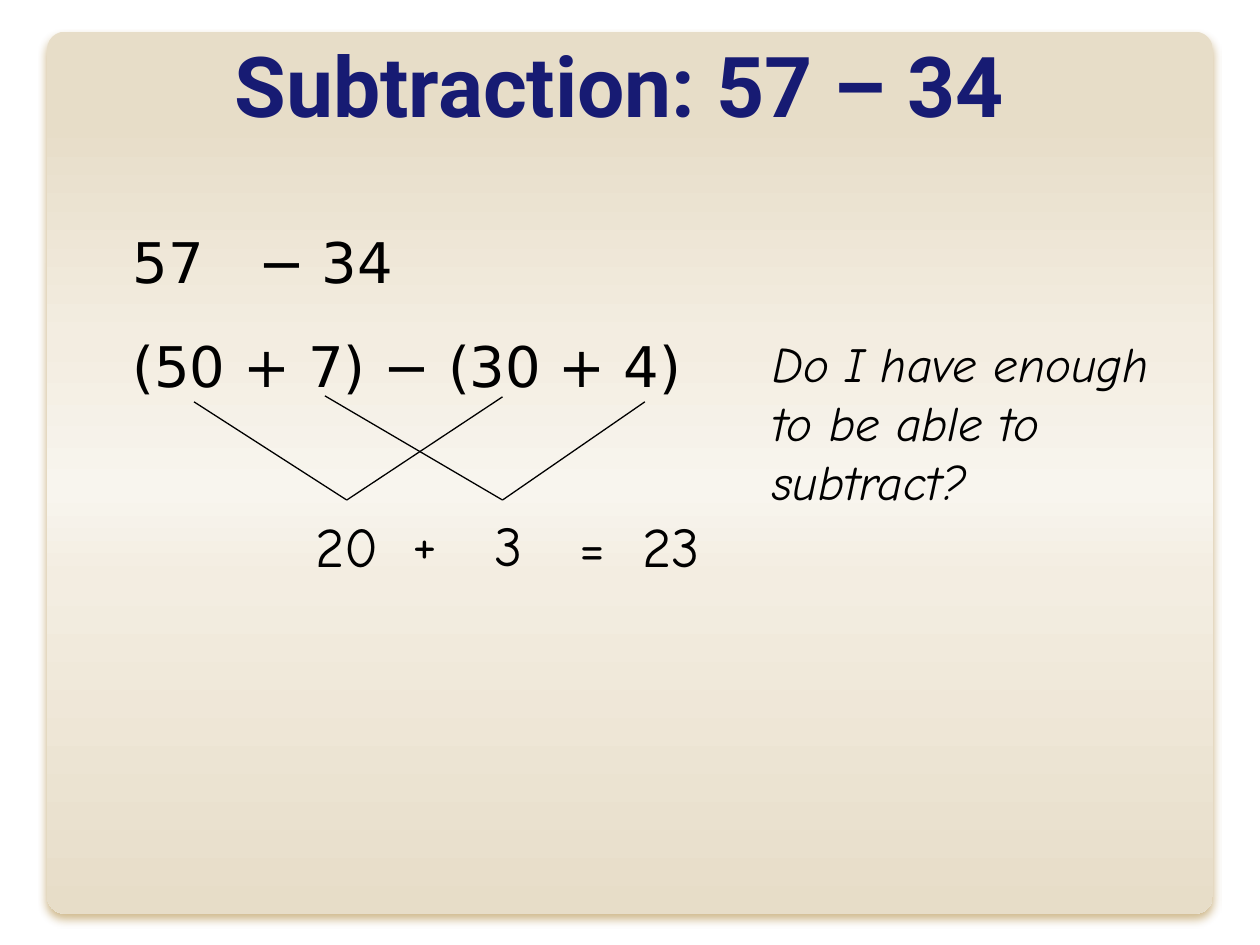
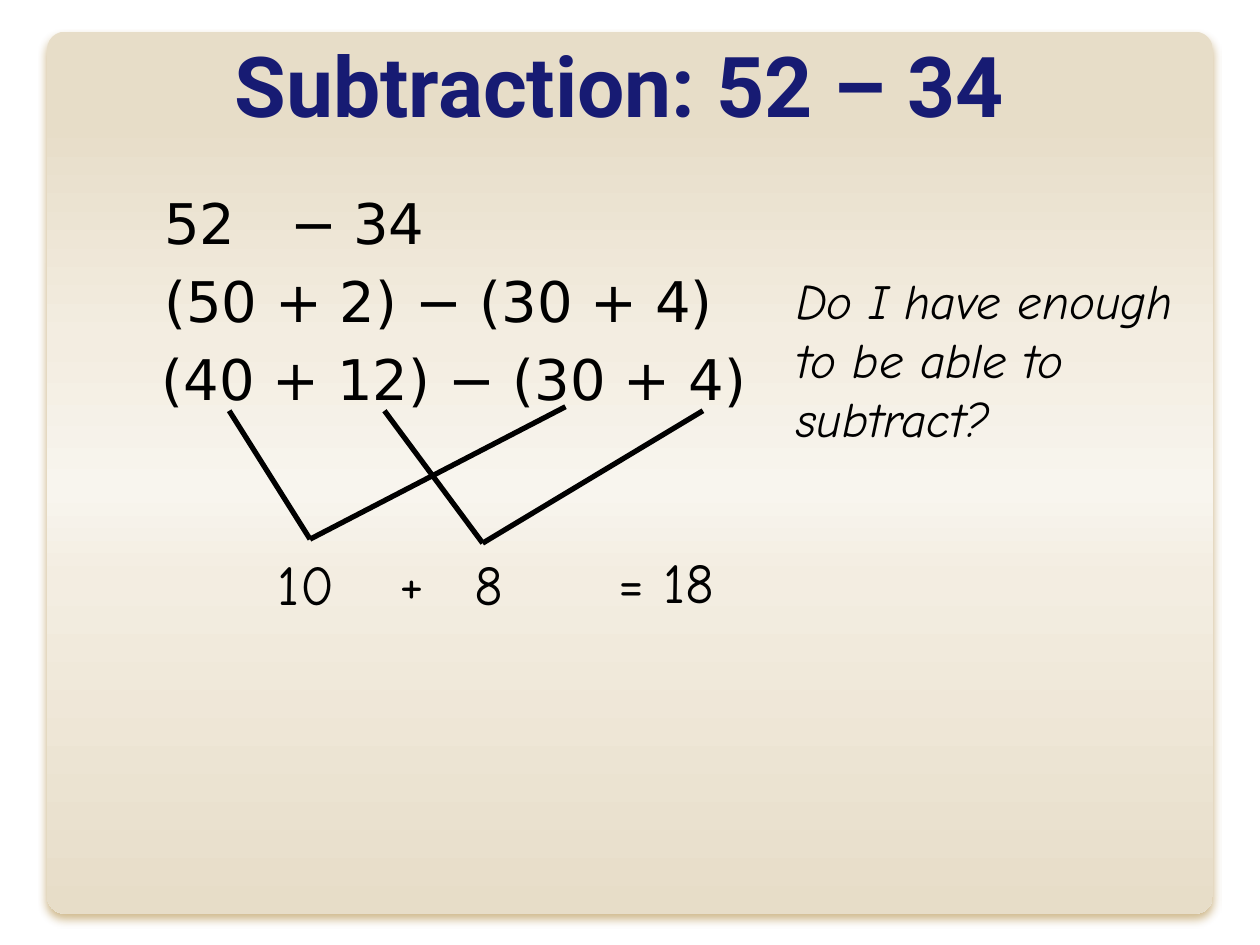
"""Build two slides that subtract two-digit numbers by splitting tens and ones."""
from dataclasses import dataclass

import lxml.etree
import pptx
import pptx.dml.color
import pptx.enum.shapes
import pptx.enum.text
import pptx.oxml
import pptx.oxml.ns
import pptx.util

Cm, Pt = pptx.util.Cm, pptx.util.Pt
PP = pptx.enum.text.PP_ALIGN
ANCHOR = pptx.enum.text.MSO_ANCHOR
qn = pptx.oxml.ns.qn

COLORS = {"title": "171B73", "text": "000000", "edge": "E7DDC8", "slope": "F3EDE1",
          "glow": "F8F5EE", "shadow": "956400"}
PANEL_STOPS = [(0, "edge"), (10, "edge"), (35, "slope"), (52, "glow"), (62, "slope"), (100, "edge")]
FORMATS = {
    "title": {"name": "Roboto", "size": Pt(48), "bold": True},
    "sum": {"name": "DejaVu Sans", "size": Pt(32), "bold": False},
    "result": {"name": "Comic Neue", "size": Pt(32)},
    "question": {"name": "Comic Neue", "size": Pt(28), "italic": True},
}
FRAME = {"word_wrap": True, "auto_size": pptx.enum.text.MSO_AUTO_SIZE.NONE}
BODY_MARGINS = dict.fromkeys(("margin_left", "margin_top", "margin_right", "margin_bottom"), Cm(0.13))
SUM_TABS = (2.96, 6.19, 8.93)
QUESTION = "Do I have enough to be able to subtract?"


@dataclass(frozen=True)
class Box:
    x: float
    y: float
    w: float
    h: float


@dataclass(frozen=True)
class Row:
    text: str
    tabs: tuple[float, ...] = ()
    indent: float = 1.27
    before: int = 20


@dataclass(frozen=True)
class Label:
    text: str
    x: float
    y: float
    tabs: tuple[float, ...] = ()


@dataclass(frozen=True)
class Pair:
    left: tuple[float, float]
    right: tuple[float, float]
    tip: tuple[float, float]


@dataclass(frozen=True)
class Lesson:
    title: str
    body: Box
    rows: list[Row]
    labels: list[Label]
    pairs: list[Pair]
    line_width: float
    question: Box


LESSONS = [
    Lesson(
        "Subtraction: 57 – 34 ", Box(1.27, 4.45, 22.86, 14.07),
        [Row("\t57\t−\t34", SUM_TABS, 0), Row("(50 + 7) − (30 + 4)", before=66)],
        [Label("20", 5.44, 10.19), Label("+", 7.01, 10.11), Label("3", 8.71, 10.16),
         Label("=\t23", 11.43, 10.19, (1.63,))],
        [Pair((3.91, 8.1), (10.13, 8), (6.99, 10.08)),
         Pair((6.55, 7.98), (13, 8.1), (10.13, 10.08))],
        0.75, Box(15.32, 6.6, 8.53, 3.81)),
    Lesson(
        "Subtraction: 52 – 34 ", Box(1.91, 3.66, 21.51, 5.36),
        [Row("\t52\t−\t34", SUM_TABS, 0), Row("(50 + 2) − (30 + 4)"),
         Row("(40 + 12) − (30 + 4)", indent=1.22)],
        [Label("10", 4.62, 10.95), Label("+", 6.76, 10.92), Label("8", 8.31, 10.95),
         Label("= 18", 11.89, 10.92)],
        [Pair((4.62, 8.28), (11.4, 8.2), (6.25, 10.87)),
         Pair((7.75, 8.28), (14.17, 8.28), (9.73, 10.95))],
        3, Box(15.8, 5.33, 8.53, 3.81)),
]


def apply(target, values: dict) -> None:
    for name, value in values.items():
        setattr(target, name, value)


def place(sp, box: Box) -> None:
    apply(sp, {"left": Cm(box.x), "top": Cm(box.y), "width": Cm(box.w), "height": Cm(box.h)})


def write(p, text: str, style: str, align=PP.LEFT, color: str = "text") -> None:
    p.alignment = align
    r = p.add_run()
    r.text = text
    apply(r.font, FORMATS[style])
    r.font.color.rgb = pptx.dml.color.RGBColor.from_string(COLORS[color])


def set_paragraph(p, before: int, indent: float = 0, tabs: tuple[float, ...] = ()) -> None:
    pPr = p._p.get_or_add_pPr()
    pPr.set("marL", str(Cm(indent)))
    pPr.set("indent", "0")
    spacing = lxml.etree.SubElement(pPr, qn("a:spcBef"))
    lxml.etree.SubElement(spacing, qn("a:spcPct"), val=str(before * 1000))
    lxml.etree.SubElement(pPr, qn("a:buNone"))
    if tabs:
        stops = lxml.etree.SubElement(pPr, qn("a:tabLst"))
        for tab in tabs:
            lxml.etree.SubElement(stops, qn("a:tab"), pos=str(Cm(tab)), algn="l")


def add_panel(slide, layout) -> None:
    sp = slide.shapes.add_shape(pptx.enum.shapes.MSO_SHAPE.ROUNDED_RECTANGLE,
                                Cm(0.95), Cm(0.64), Cm(23.5), Cm(17.78))
    sp.adjustments[0] = 0.02
    ns = pptx.oxml.ns.nsdecls("a")
    stops = "".join(f'<a:gs pos="{pos * 1000}"><a:srgbClr val="{COLORS[name]}"/></a:gs>'
                    for pos, name in PANEL_STOPS)
    spPr = sp.element.spPr
    spPr.insert(2, pptx.oxml.parse_xml(
        f'<a:gradFill {ns} rotWithShape="1"><a:gsLst>{stops}</a:gsLst>'
        '<a:lin ang="5400000" scaled="0"/></a:gradFill>'))
    sp.line.fill.background()
    spPr.append(pptx.oxml.parse_xml(
        f'<a:effectLst {ns}><a:outerShdw blurRad="{Pt(5)}" dist="{Pt(3.6)}" dir="5400000" '
        f'algn="t" rotWithShape="0"><a:srgbClr val="{COLORS["shadow"]}">'
        '<a:alpha val="45000"/></a:srgbClr></a:outerShdw></a:effectLst>'))
    sp.element.nvSpPr.cNvPr.set("id", "20")
    layout.shapes.element.insert(2, sp.element)


def add_text(slide, box: Box, text: str, style: str, align, tabs: tuple[float, ...] = ()) -> None:
    sp = slide.shapes.add_textbox(0, 0, 0, 0)
    place(sp, box)
    tf = sp.text_frame
    apply(tf, FRAME)
    p = tf.paragraphs[0]
    write(p, text, style, align)
    set_paragraph(p, 50, tabs=tabs)


def add_line(slide, start: tuple[float, float], end: tuple[float, float], width: float) -> None:
    sp = slide.shapes.add_connector(pptx.enum.shapes.MSO_CONNECTOR.STRAIGHT,
                                    *(Cm(v) for v in start + end))
    sp.line.width = Pt(width)
    sp.line.color.rgb = pptx.dml.color.RGBColor.from_string(COLORS["text"])
    lxml.etree.SubElement(sp.element.spPr, qn("a:effectLst"))


def fill_slide(slide, lesson: Lesson) -> None:
    title, body = slide.placeholders
    place(title, Box(1.27, 0.1, 22.86, 3.18))
    tf = title.text_frame
    apply(tf, FRAME | {"vertical_anchor": ANCHOR.MIDDLE})
    write(tf.paragraphs[0], lesson.title, "title", PP.CENTER, "title")

    place(body, lesson.body)
    tf = body.text_frame
    apply(tf, FRAME | BODY_MARGINS | {"vertical_anchor": ANCHOR.TOP})
    for i, row in enumerate(lesson.rows):
        p = tf.add_paragraph() if i else tf.paragraphs[0]
        write(p, row.text, "sum")
        set_paragraph(p, row.before, row.indent, row.tabs)

    for pair in lesson.pairs:
        for start in (pair.left, pair.right):
            add_line(slide, start, pair.tip, lesson.line_width)
    for label in lesson.labels:
        align = PP.LEFT if label.tabs else PP.CENTER
        add_text(slide, Box(label.x, label.y, 3.1, 1.6), label.text, "result", align, label.tabs)
    add_text(slide, lesson.question, QUESTION, "question", PP.LEFT)


def main() -> None:
    prs = pptx.Presentation()
    prs.slide_width, prs.slide_height = Cm(25.4), Cm(19.05)
    layout = prs.slide_layouts[1]
    for i, lesson in enumerate(LESSONS):
        slide = prs.slides.add_slide(layout)
        if i == 0:
            add_panel(slide, layout)
        fill_slide(slide, lesson)
    prs.save("out.pptx")


if __name__ == "__main__":
    main()
